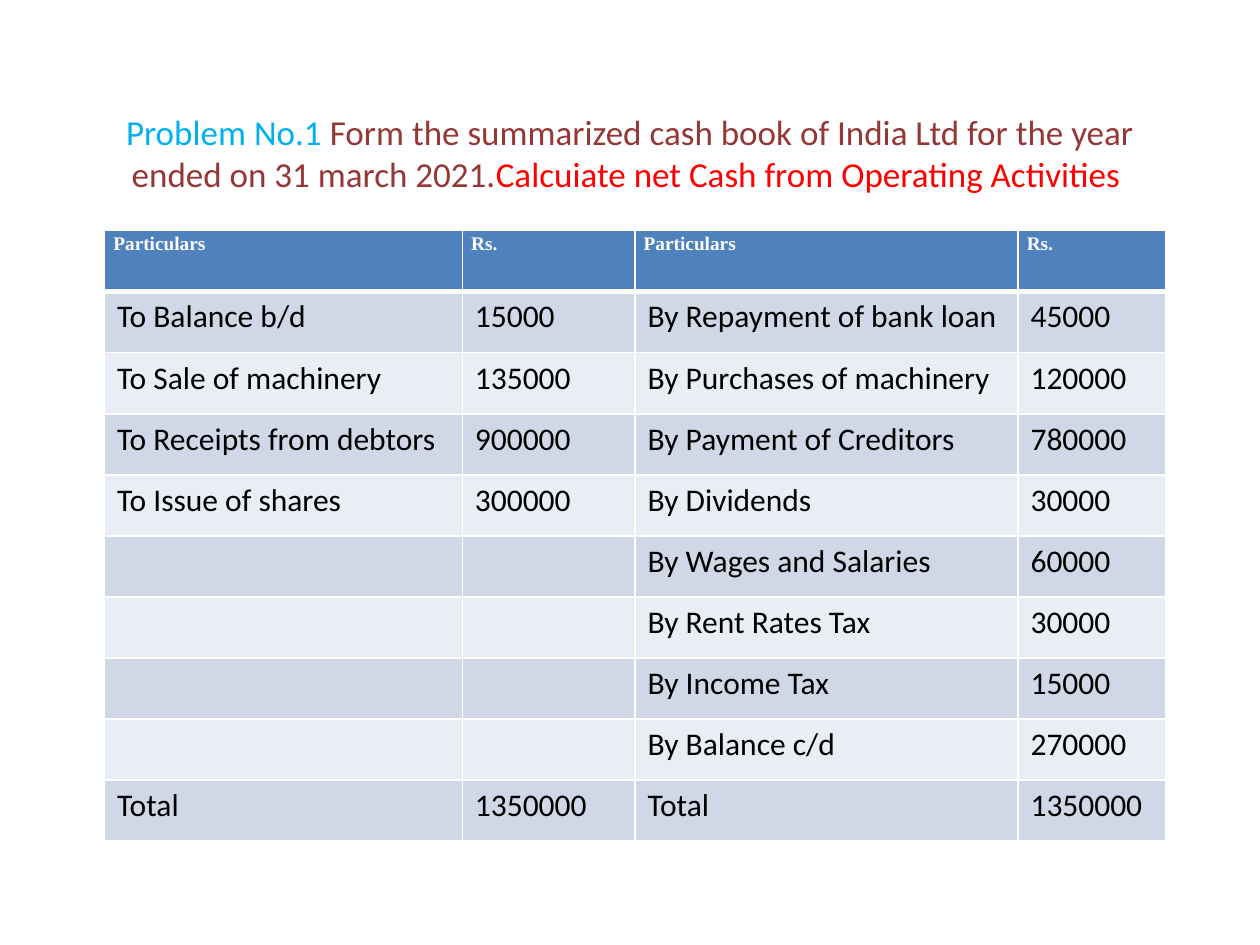
from lxml.etree import SubElement
from pptx import Presentation
from pptx.dml.color import RGBColor
from pptx.enum.text import MSO_ANCHOR, PP_ALIGN
from pptx.oxml.ns import qn
from pptx.util import Inches, Pt

TITLE = [
    ("Problem No.1 ", "00B0F0"),
    ("Form the summarized cash book of India Ltd for the year ended on 31 march 2021.", "953735"),
    ("Calcuiate net Cash from Operating Activities ", "FF0000"),
]
HEADER = ("Particulars", "Rs.", "Particulars", "Rs.")
ENTRIES = [
    ("To Balance b/d", "15000", "By Repayment of bank loan", "45000"),
    ("To Sale of machinery", "135000", "By Purchases of machinery", "120000"),
    ("To Receipts from debtors", "900000", "By Payment of Creditors", "780000"),
    ("To Issue of shares", "300000", "By Dividends", "30000"),
    ("", "", "By Wages and Salaries", "60000"),
    ("", "", "By Rent Rates Tax", "30000"),
    ("", "", "By Income Tax", "15000"),
    ("", "", "By Balance c/d", "270000"),
    ("Total", "1350000", "Total", "1350000"),
]
COLUMN_WIDTHS = (2.84, 1.37, 3.04, 1.17)
BANDS = ("D0D8E8", "E9EDF4")


def rgb(color):
    """Turn a hex string into a colour."""
    return RGBColor.from_string(color)


def style_run(r, size, font, color, bold=False):
    """Format one run of text."""
    r.font.size = Pt(size)
    r.font.name = font
    r.font.bold = bold
    r.font.color.rgb = rgb(color)


def set_borders(cell, **widths):
    """Draw white cell borders with the given widths in points."""
    tc_pr = cell._tc.get_or_add_tcPr()
    for i, (side, width) in enumerate(widths.items()):
        ln = SubElement(tc_pr, qn(f"a:ln{side}"), w=str(Pt(width)))
        fill = SubElement(ln, qn("a:solidFill"))
        SubElement(fill, qn("a:srgbClr"), val="FFFFFF")
        tc_pr.remove(ln)
        tc_pr.insert(i, ln)


def add_title(s, left, top, width, height):
    """Place the coloured problem statement in the title placeholder."""
    title = s.shapes.title
    title.left, title.top = Inches(left), Inches(top)
    title.width, title.height = Inches(width), Inches(height)
    tf = title.text_frame
    tf.vertical_anchor = MSO_ANCHOR.MIDDLE
    p = tf.paragraphs[0]
    p.alignment = PP_ALIGN.CENTER
    for text, color in TITLE:
        r = p.add_run()
        r.text = text
        style_run(r, 20, "Calibri", color)


def fill_cell(cell, text, row):
    """Write and format one cell of the cash book."""
    is_header = row == 0
    cell.text = text
    cell.fill.solid()
    cell.fill.fore_color.rgb = rgb("4F81BD" if is_header else BANDS[(row - 1) % 2])
    set_borders(cell, L=1, R=1, T=3 if row == 1 else 1, B=3 if is_header else 1)
    p = cell.text_frame.paragraphs[0]
    if is_header:
        cell.margin_left = cell.margin_right = Inches(0.07)
        cell.margin_top = cell.margin_bottom = 0
        p.line_spacing = 1.15
    for r in p.runs:
        if is_header:
            style_run(r, 11, "Times New Roman", "FFFFFF", True)
        else:
            style_run(r, 18, "Calibri", "000000")


def add_cash_book(s, left, top, width, height):
    """Place the cash book table with equal rows."""
    rows = [HEADER, *ENTRIES]
    table = s.shapes.add_table(len(rows), len(HEADER), Inches(left), Inches(top),
                               Inches(width), Inches(height)).table
    for column, share in zip(table.columns, COLUMN_WIDTHS):
        column.width = Inches(width * share / sum(COLUMN_WIDTHS))
    for i, values in enumerate(rows):
        for j, text in enumerate(values):
            fill_cell(table.cell(i, j), text, i)


def main():
    """Build the slide and save it."""
    prs = Presentation()
    prs.slide_width, prs.slide_height = Inches(10), Inches(7.5)
    s = prs.slides.add_slide(prs.slide_layouts[0])
    subtitle = s.placeholders[1].element
    subtitle.getparent().remove(subtitle)
    add_title(s, 0.75, 0.67, 8.5, 1.08)
    add_cash_book(s, 0.83, 1.83, 8.42, 4.85)
    prs.save("out.pptx")


if __name__ == "__main__":
    main()
